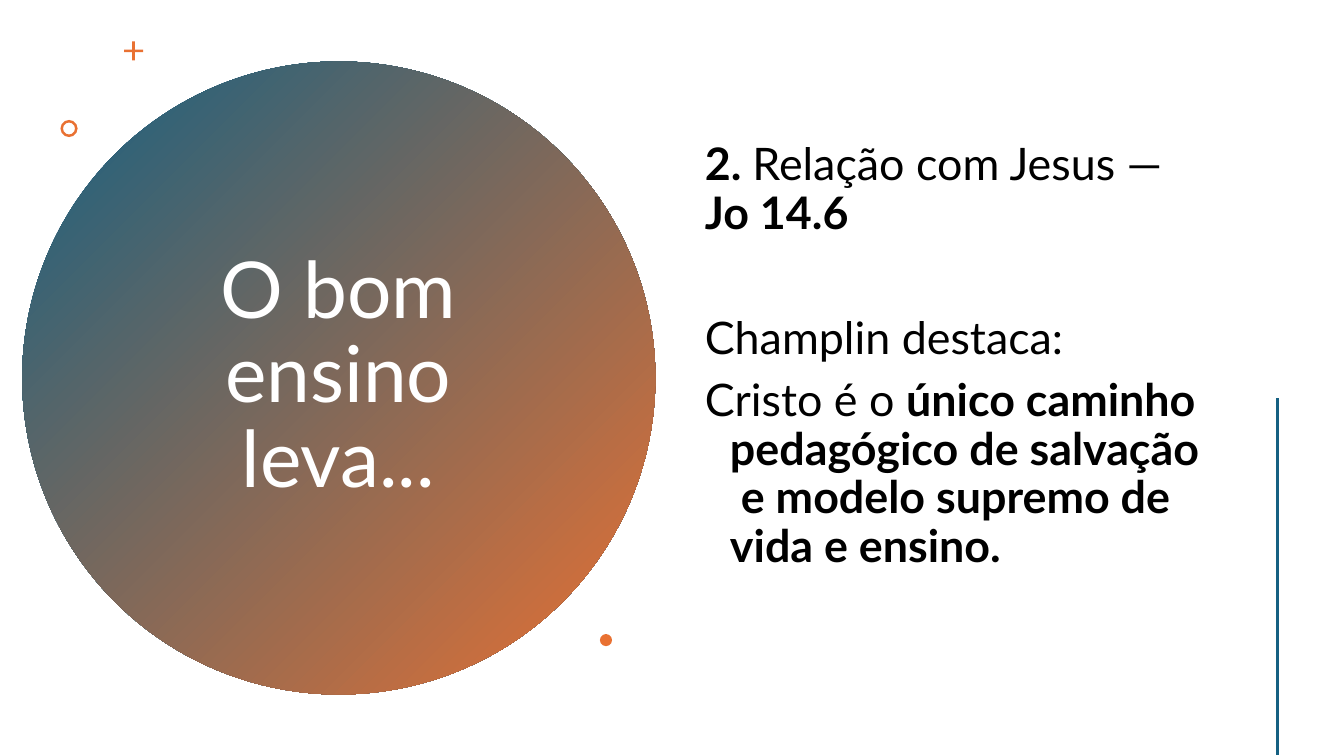
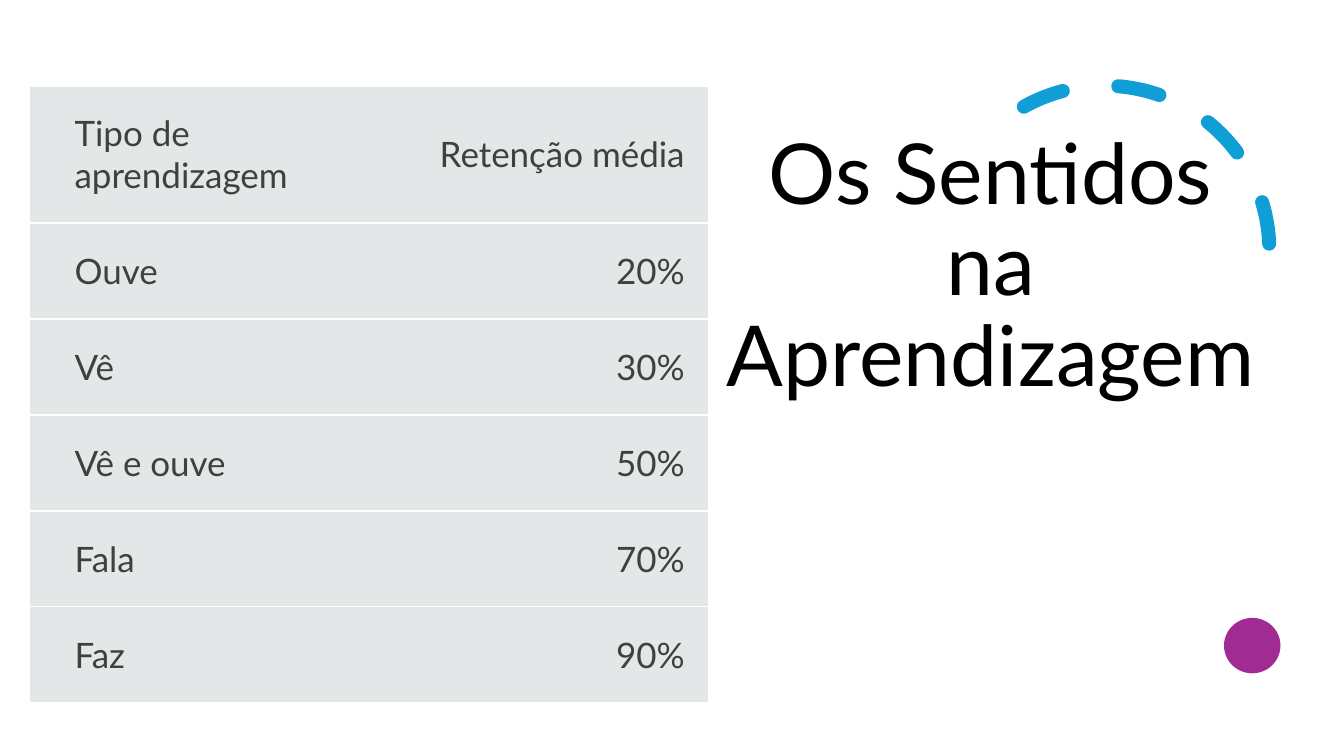
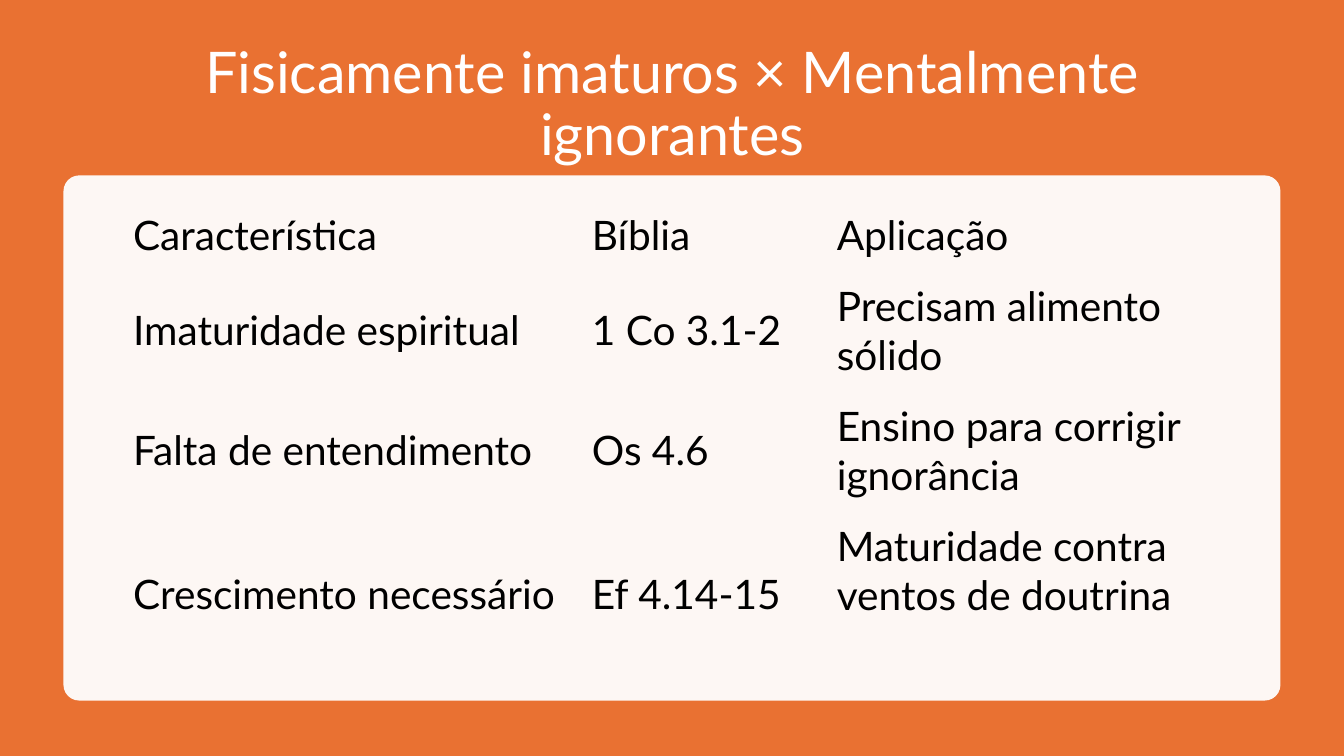
from dataclasses import dataclass

from lxml import etree
from pptx import Presentation
from pptx.dml.color import RGBColor
from pptx.enum.dml import MSO_LINE
from pptx.enum.shapes import MSO_CONNECTOR as Connector, MSO_SHAPE as Preset
from pptx.enum.text import MSO_ANCHOR as Anchor, MSO_AUTO_SIZE as AutoSize, PP_ALIGN as Align
from pptx.oxml.ns import qn
from pptx.util import Inches, Pt


@dataclass(frozen=True)
class Theme:
    font: str = "Lato"
    blue: str = "156082"
    orange: str = "E97132"
    sky: str = "0F9ED5"
    purple: str = "A02B93"
    grey: str = "B4BCBE"
    dark: str = "404040"
    black: str = "000000"
    white: str = "FFFFFF"
    circle_title: int = 56
    side_title: int = 60
    band_title: int = 41
    body: int = 32
    grid_small: int = 25
    grid_large: int = 29
    line_spacing: float = 0.9
    plain_grid: str = "{2D5ABB26-0587-4C30-8999-92F81FD0307C}"


THEME = Theme()


@dataclass(frozen=True)
class Box:
    left: float
    top: float
    width: float
    height: float

    def inner(self, left, top, width, height):
        """A box given relative to this one's top left corner."""
        return Box(self.left + left, self.top + top, width, height)

    def lengths(self):
        return [Inches(n) for n in (self.left, self.top, self.width, self.height)]


PAGE = Box(0, 0, 13.33, 7.5)


# Shared helpers
def rgb(color):
    return RGBColor.from_string(color)


def style_run(run, size, color, bold=None):
    run.font.name = THEME.font
    run.font.size = Pt(size)
    run.font.color.rgb = rgb(color)
    run.font.bold = bold


def set_alpha(element, percent):
    color = next(element.iter(qn("a:srgbClr")))
    etree.SubElement(color, qn("a:alpha"), val=str(percent * 1000))


def add_preset(slide, preset, box, color=None, adjust=()):
    shape = slide.shapes.add_shape(preset, *box.lengths())
    shape.shadow.inherit = False
    shape.line.fill.background()
    if color:
        shape.fill.solid()
        shape.fill.fore_color.rgb = rgb(color)
    else:
        shape.fill.background()
    for index, value in enumerate(adjust):
        shape.adjustments[index] = value
    return shape


def place(holder, box, anchor):
    """Move a placeholder to its box and in front of what is drawn so far."""
    holder.left, holder.top, holder.width, holder.height = box.lengths()
    holder.element.getparent().append(holder.element)
    frame = holder.text_frame
    frame.word_wrap = True
    frame.auto_size = AutoSize.NONE
    frame.vertical_anchor = anchor
    return frame


def add_title(slide, box, text, size, color, anchor=Anchor.MIDDLE):
    frame = place(slide.shapes.title, box, anchor)
    frame.text = text
    para = frame.paragraphs[0]
    para.alignment = Align.CENTER
    para.line_spacing = THEME.line_spacing
    style_run(para.runs[0], size, color)


def add_grid(slide, box, rows, widths, heights, size, color, margins):
    """A plain table; margins are left, top, right, bottom."""
    frame = slide.shapes.add_table(len(rows), len(widths), *box.lengths())
    next(frame.element.iter(qn("a:tableStyleId"))).text = THEME.plain_grid
    table = frame.table
    table.first_row = table.horz_banding = False
    for column, width in zip(table.columns, widths):
        column.width = Inches(width)
    for row, height, texts in zip(table.rows, heights, rows):
        row.height = Inches(height)
        for cell, text in zip(row.cells, texts):
            cell.text = text
            cell.vertical_anchor = Anchor.MIDDLE
            (cell.margin_left, cell.margin_top,
             cell.margin_right, cell.margin_bottom) = [Inches(n) for n in margins]
            style_run(cell.text_frame.paragraphs[0].runs[0], size, color)
    return table


def add_rules(cell, color, width):
    """Lines above and below a cell."""
    properties = cell._tc.get_or_add_tcPr()
    for index, side in enumerate(("a:lnT", "a:lnB")):
        line = etree.Element(qn(side), w=str(Pt(width)))
        fill = etree.SubElement(line, qn("a:solidFill"))
        etree.SubElement(fill, qn("a:srgbClr"), val=color)
        properties.insert(index, line)


# Slide 1: title circle, numbered text, side line
def draw_title_circle(slide, box, text):
    circle = add_preset(slide, Preset.OVAL, box)
    circle.fill.gradient()
    circle.fill.gradient_angle = 315
    for stop, color in zip(circle.fill.gradient_stops, (THEME.blue, THEME.orange)):
        stop.color.rgb = rgb(color)
    add_title(slide, box.inner(1.14, 0.8, 3.99, 4.67), text,
              THEME.circle_title, THEME.white)
    marks = [
        (Preset.CROSS, (1.01, -0.2, 0.19, 0.19), [0.43]),
        (Preset.DONUT, (0.38, 0.58, 0.17, 0.17), [0.15]),
        (Preset.OVAL, (5.73, 5.68, 0.12, 0.12), []),
    ]
    for preset, offsets, adjust in marks:
        add_preset(slide, preset, box.inner(*offsets), THEME.orange, adjust)


def draw_body(slide, box, paragraphs):
    """Each paragraph is (hanging indent, space before, [(text, bold)])."""
    frame = place(slide.placeholders[1], box, Anchor.MIDDLE)
    for index, (indent, space, pieces) in enumerate(paragraphs):
        para = frame.paragraphs[0] if index == 0 else frame.add_paragraph()
        para.line_spacing = THEME.line_spacing
        para.space_before = Pt(space)
        properties = para._p.get_or_add_pPr()
        properties.set("marL", str(Inches(indent)))
        properties.set("indent", str(-Inches(indent)))
        etree.SubElement(properties, qn("a:buNone"))
        for text, bold in pieces:
            for number, line in enumerate(text.split("\n")):
                if number:
                    para.add_line_break()
                run = para.add_run()
                run.text = line
                style_run(run, THEME.body, THEME.black, bold)


def draw_side_line(slide, box):
    line = slide.shapes.add_connector(
        Connector.STRAIGHT, Inches(box.left), Inches(box.top),
        Inches(box.left), Inches(box.top + box.height))
    line.line.color.rgb = rgb(THEME.blue)
    line.line.width = Pt(2)
    etree.SubElement(line.element.spPr, qn("a:effectLst"))


def build_relation(slide):
    draw_title_circle(slide, Box(0.22, 0.61, 6.28, 6.28), "O bom ensino leva...")
    draw_body(slide, Box(6.89, 0.57, 5.22, 5.94), [
        (0, 10, [("2. ", True), ("Relação com Jesus — ", False), ("Jo 14.6", True)]),
        (0.25, 55, [("Champlin destaca:", False)]),
        (0.25, 10, [
            ("Cristo é o ", False),
            ("único caminho pedagógico de salvação\n e modelo supremo de vida e ensino.", True),
        ]),
    ])
    draw_side_line(slide, PAGE.inner(12.67, 3.95, 0, 3.54))


# Slide 2: retention table and title under a dashed arc
def draw_arc_title(slide, box, text):
    arc = add_preset(slide, Preset.ARC, box.inner(2.3, -0.2, 3.27, 3.27),
                     adjust=[144.42, 0])
    arc.line.color.rgb = rgb(THEME.sky)
    arc.line.width = Pt(10)
    arc.line.dash_style = MSO_LINE.DASH
    arc.element.spPr.find(qn("a:ln")).set("cap", "rnd")
    add_title(slide, box, text, THEME.side_title, THEME.black, Anchor.BOTTOM)
    add_preset(slide, Preset.OVAL, box.inner(5.12, 5.08, 0.56, 0.55), THEME.purple)


def draw_retention(slide, box, rows):
    header = 1.36
    row_height = (box.height - header) / (len(rows) - 1)
    table = add_grid(slide, box, rows, [3.19, 3.53],
                     [header] + [row_height] * (len(rows) - 1),
                     THEME.grid_small, THEME.dark, (0.44, 0.23, 0.23, 0.23))
    for row in table.rows:
        row.cells[1].text_frame.paragraphs[0].alignment = Align.RIGHT
        for cell in row.cells:
            cell.fill.solid()
            cell.fill.fore_color.rgb = rgb(THEME.grey)
            set_alpha(cell._tc.tcPr, 35)
            add_rules(cell, THEME.white, 1.5)


def build_senses(slide):
    draw_arc_title(slide, Box(7.02, 1.05, 5.61, 3.01), "Os Sentidos na Aprendizagem")
    draw_retention(slide, Box(0.3, 0.85, 6.72, 6.12), [
        ("Tipo de aprendizagem", "Retenção média"),
        ("Ouve", "20%"),
        ("Vê", "30%"),
        ("Vê e ouve", "50%"),
        ("Fala", "70%"),
        ("Faz", "90%"),
    ])


# Slide 3: comparison table on a pale panel
def draw_panel_table(slide, box, rows):
    panel = add_preset(slide, Preset.ROUNDED_RECTANGLE, box, THEME.white, [0.03])
    set_alpha(panel.element.spPr, 95)
    table = add_grid(slide, box.inner(0.53, 0.23, 11.02, 4.76), rows,
                     [4.55, 2.43, 4.04], [0.71, 1.19, 1.19, 1.67],
                     THEME.grid_large, THEME.black, (0.16, 0.08, 0.16, 0.08))
    # The last application sits one line higher in its cell
    table.cell(len(rows) - 1, 2).margin_bottom = Inches(0.56)


def build_comparison(slide):
    add_preset(slide, Preset.RECTANGLE, PAGE, THEME.orange)
    add_title(slide, PAGE.inner(0.92, 0.5, 11.5, 1.1),
              "Fisicamente imaturos × Mentalmente ignorantes",
              THEME.band_title, THEME.white)
    draw_panel_table(slide, Box(0.63, 1.74, 12.07, 5.21), [
        ("Característica", "Bíblia", "Aplicação"),
        ("Imaturidade espiritual", "1 Co 3.1-2", "Precisam alimento sólido"),
        ("Falta de entendimento", "Os 4.6", "Ensino para corrigir ignorância"),
        ("Crescimento necessário", "Ef 4.14-15", "Maturidade contra ventos de doutrina"),
    ])


def main():
    deck = Presentation()
    deck.slide_width, deck.slide_height = Inches(PAGE.width), Inches(PAGE.height)
    title_and_body, title_only = deck.slide_layouts[1], deck.slide_layouts[5]
    for layout, build in [
        (title_and_body, build_relation),
        (title_only, build_senses),
        (title_only, build_comparison),
    ]:
        build(deck.slides.add_slide(layout))
    deck.save("out.pptx")


if __name__ == "__main__":
    main()
